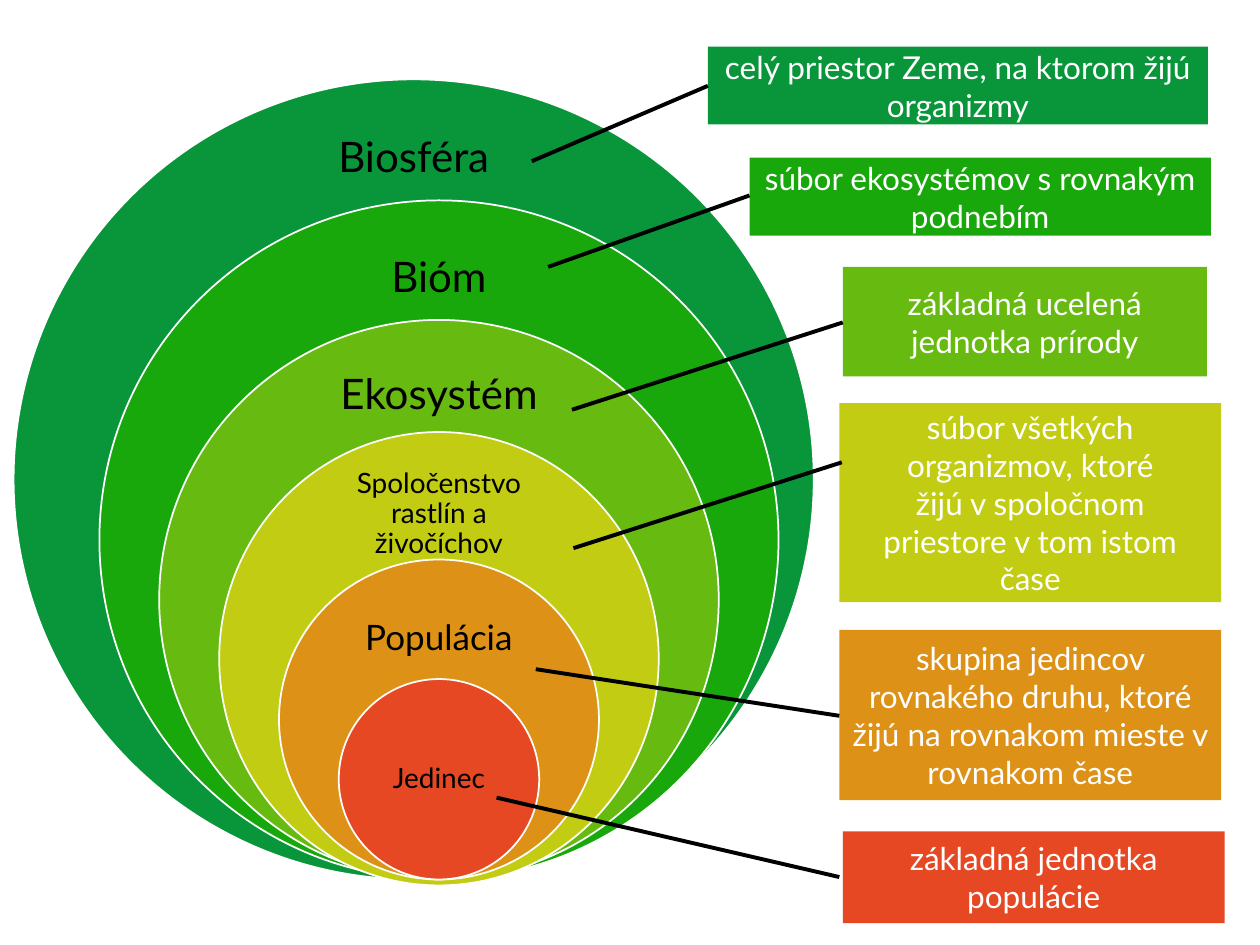
from dataclasses import dataclass

from lxml.etree import SubElement
from pptx import Presentation
from pptx.dml.color import RGBColor
from pptx.enum.shapes import MSO_CONNECTOR as Connector, MSO_SHAPE as Shape
from pptx.enum.text import MSO_ANCHOR as Anchor, PP_ALIGN as Align
from pptx.oxml.ns import qn
from pptx.util import Cm, Pt


@dataclass(frozen=True)
class Theme:
    font: str = "Lato"
    ink: str = "000000"
    paper: str = "FFFFFF"
    note_size: int = 18
    outline: float = 1
    leader: float = 2.25


@dataclass(frozen=True)
class Level:
    """One level of life: its circle, label, note and leader; lengths in cm."""
    name: str
    color: str
    circle: tuple[float, float]            # width, height
    label: tuple[float, float, float]      # top, width, height
    label_size: int
    note: tuple[str, ...]
    note_box: tuple[float, float, float, float]
    leader: tuple[float, float, float, float]
    center: float = 8.85
    bottom: float = 17.73


THEME = Theme()

LEVELS = [
    Level("Biosféra", "09963B", (16.13, 16.13), (2.41, 6.05, 1.6), 24,
          ("celý priestor Zeme, na ktorom žijú organizmy",),
          (14.27, 0.94, 10.08, 1.57), (10.72, 3.25, 14.27, 1.73), center=8.34),
    Level("Bióm", "18A80C", (13.69, 13.69), (4.83, 5.92, 1.57), 24,
          ("súbor ekosystémov s rovnakým podnebím",),
          (15.11, 3.18, 9.3, 1.57), (11.05, 5.38, 15.11, 3.94)),
    Level("Ekosystém", "67BA0F", (11.28, 11.28), (7.21, 5.84, 1.55), 24,
          ("základná ucelená jednotka prírody",),
          (16.99, 5.38, 7.34, 2.21), (11.53, 8.26, 16.99, 6.5)),
    Level("Spoločenstvo rastlín a živočíchov", "C2CC13", (8.86, 9.14),
          (9.55, 4.78, 1.65), 16,
          ("súbor všetkých organizmov, ktoré",
           "žijú v spoločnom priestore v tom istom čase"),
          (16.92, 8.13, 7.7, 4.01), (11.56, 11.05, 16.97, 9.32), bottom=17.85),
    Level("Populácia", "DD9217", (6.45, 6.45), (12.09, 4.19, 1.6), 20,
          ("skupina jedincov rovnakého druhu, ktoré žijú na rovnakom mieste "
           "v rovnakom čase",),
          (16.92, 12.7, 7.7, 3.43), (10.8, 13.49, 16.92, 14.43)),
    Level("Jedinec", "E64823", (4.04, 4.04), (14.71, 2.84, 2.01), 16,
          ("základná jednotka populácie",),
          (16.99, 16.76, 7.7, 1.85), (10.01, 16.08, 16.92, 17.68)),
]


def rgb(color: str) -> RGBColor:
    return RGBColor.from_string(color)


def apply(target, formats: dict) -> None:
    for name, value in formats.items():
        setattr(target, name, value)


def write(frame, lines: tuple[str, ...], size: int, color: str,
          inset: float | None = None, spacing: float | None = None) -> None:
    apply(frame, {"word_wrap": True, "vertical_anchor": Anchor.MIDDLE})
    if inset is not None:
        sides = ("left", "top", "right", "bottom")
        apply(frame, {f"margin_{side}": Cm(inset) for side in sides})
    for index, line in enumerate(lines):
        paragraph = frame.add_paragraph() if index else frame.paragraphs[0]
        apply(paragraph, {"alignment": Align.CENTER, "line_spacing": spacing})
        run = paragraph.add_run()
        run.text = line
        apply(run.font, {"name": THEME.font, "size": Pt(size)})
        run.font.color.rgb = rgb(color)


def draw_filled(slide, kind: Shape, box: tuple, color: str):
    shape = slide.shapes.add_shape(kind, *map(Cm, box))
    shape.shadow.inherit = False
    shape.fill.solid()
    shape.fill.fore_color.rgb = rgb(color)
    return shape


def draw_circle(slide, level: Level) -> None:
    width, height = level.circle
    box = (level.center - width / 2, level.bottom - height, width, height)
    circle = draw_filled(slide, Shape.OVAL, box, level.color)
    circle.line.color.rgb = rgb(THEME.paper)
    circle.line.width = Pt(THEME.outline)

    top, width, height = level.label
    label = slide.shapes.add_textbox(
        Cm(level.center - width / 2), Cm(top), Cm(width), Cm(height))
    write(label.text_frame, (level.name,), level.label_size, THEME.ink,
          inset=0.02 * level.label_size, spacing=0.9)


def draw_note(slide, level: Level) -> None:
    note = draw_filled(slide, Shape.RECTANGLE, level.note_box, level.color)
    note.line.fill.background()
    write(note.text_frame, level.note, THEME.note_size, THEME.paper)


def draw_leader(slide, level: Level) -> None:
    leader = slide.shapes.add_connector(
        Connector.STRAIGHT, *map(Cm, level.leader))
    leader.line.color.rgb = rgb(THEME.ink)
    leader.line.width = Pt(THEME.leader)
    SubElement(leader._element.spPr, qn("a:effectLst"))


def main() -> None:
    deck = Presentation()
    apply(deck, {"slide_width": Cm(25.4), "slide_height": Cm(19.05)})
    slide = deck.slides.add_slide(deck.slide_layouts[6])

    # Nested circles first, then the notes, with leaders on top
    for draw in (draw_circle, draw_note, draw_leader):
        for level in LEVELS:
            draw(slide, level)

    deck.save("out.pptx")


if __name__ == "__main__":
    main()
